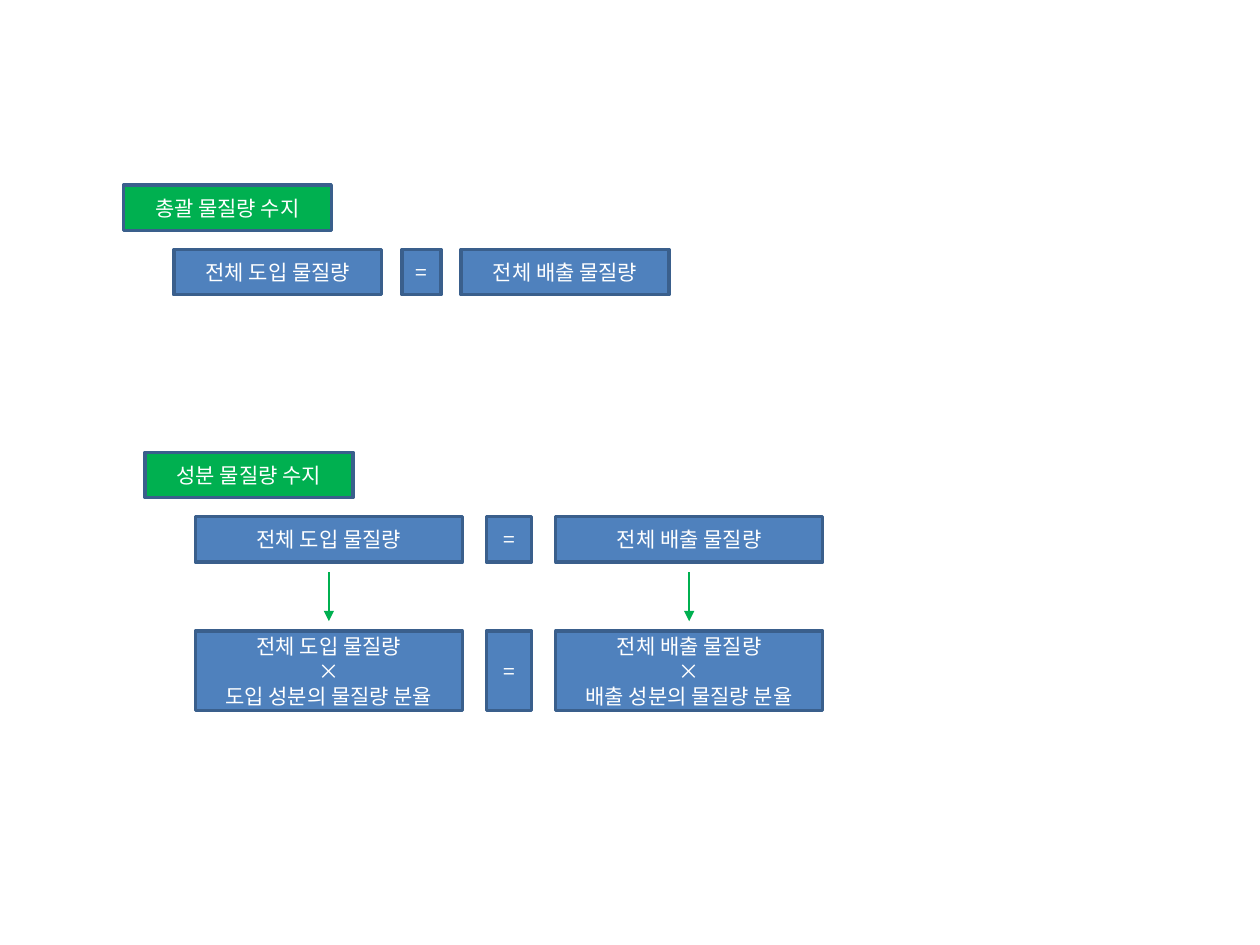
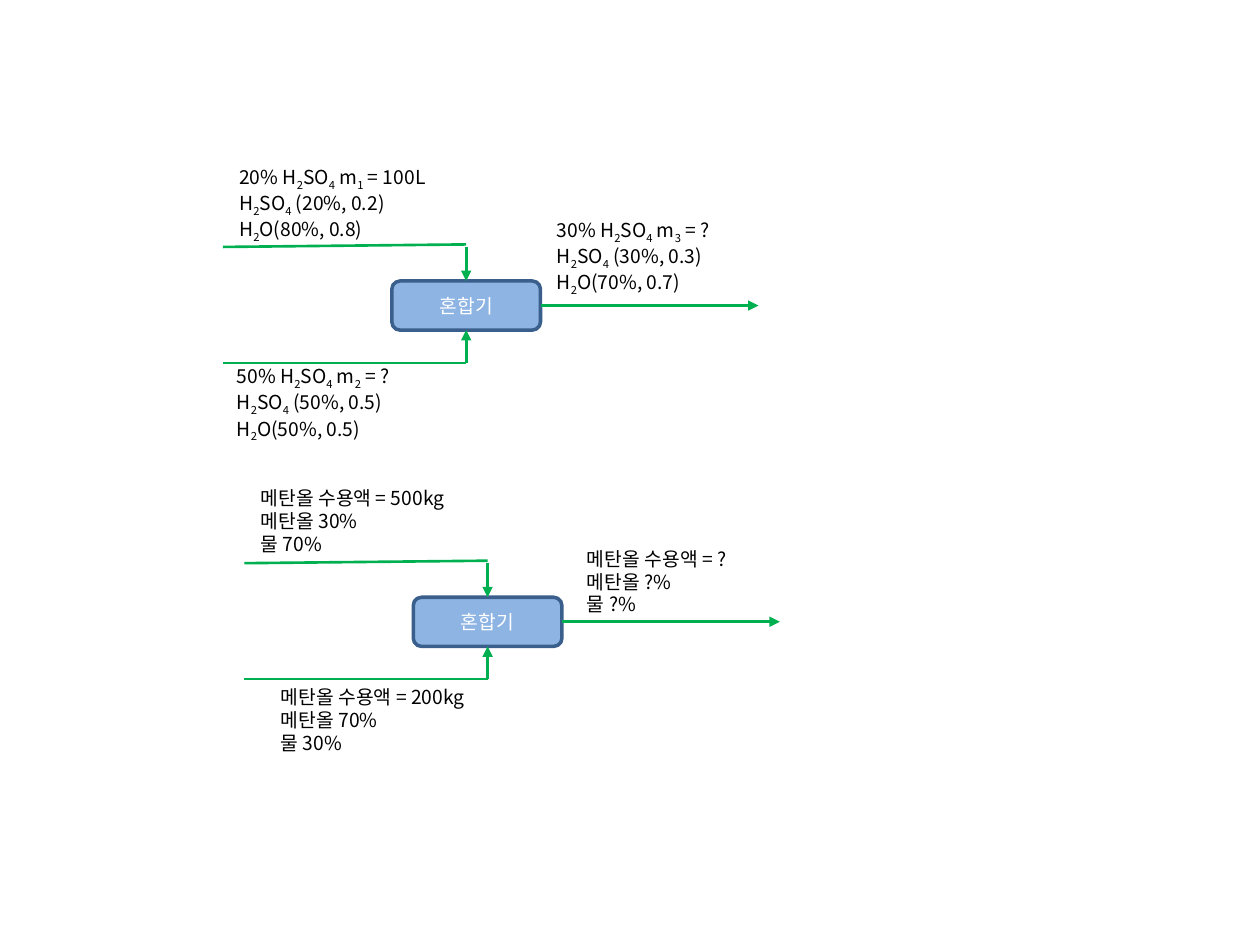
from lxml import etree
from pptx import Presentation
from pptx.dml.color import RGBColor
from pptx.enum.shapes import MSO_CONNECTOR, MSO_SHAPE
from pptx.enum.text import MSO_ANCHOR, PP_ALIGN
from pptx.oxml.ns import qn
from pptx.util import Inches, Pt

FONT = "Noto Sans CJK KR"
WHITE, BLACK = "FFFFFF", "000000"
GREEN, BLUE, LIGHT_BLUE, NAVY = "00B050", "4F81BD", "8EB4E3", "3A5F8C"
TERM_HEIGHT = 0.36


def color(hex_code):
    return RGBColor.from_string(hex_code)


def format_runs(paragraph, size, hex_code):
    for run in paragraph.runs:
        run.font.size = Pt(size)
        run.font.name = FONT
        run.font.color.rgb = color(hex_code)
        east_asian = etree.SubElement(run.font._element, qn("a:ea"))
        east_asian.set("typeface", FONT)


def write_formula(paragraph, formula):
    """Write a line in which each character after "_" is a subscript."""
    start, *parts = formula.split("_")
    pieces = [(start, False)]
    for part in parts:
        pieces += [(part[0], True), (part[1:], False)]
    for piece, is_subscript in pieces:
        if piece:
            run = paragraph.add_run()
            run.text = piece
            if is_subscript:
                run.font._element.set("baseline", "-25000")


def add_box(group, preset, left, top, width, height):
    box = group.shapes.add_shape(
        preset, Inches(left), Inches(top), Inches(width), Inches(height))
    box.shadow.inherit = False
    box.text_frame.word_wrap = True
    box.text_frame.vertical_anchor = MSO_ANCHOR.MIDDLE
    return box


def add_block(group, place, text, fill, preset=MSO_SHAPE.RECTANGLE, size=12):
    """Add a filled, outlined box with centred white text."""
    block = add_box(group, preset, *place)
    block.fill.solid()
    block.fill.fore_color.rgb = color(fill)
    block.line.color.rgb = color(NAVY)
    block.line.width = Pt(2)
    frame = block.text_frame
    frame.margin_top = frame.margin_bottom = 0
    frame.text = text
    for paragraph in frame.paragraphs:
        paragraph.alignment = PP_ALIGN.CENTER
        paragraph.line_spacing = Pt(size * 1.19)
        format_runs(paragraph, size, WHITE)


def add_stream_label(group, left, top, lines):
    label = add_box(group, MSO_SHAPE.ROUNDED_RECTANGLE, left, top, 1.97, 0.63)
    label.fill.background()
    label.line.fill.background()
    frame = label.text_frame
    spacing = Pt(15 if "_" in lines[0] else 13.1)
    for index, line in enumerate(lines):
        paragraph = frame.add_paragraph() if index else frame.paragraphs[0]
        paragraph.alignment = PP_ALIGN.LEFT
        paragraph.line_spacing = spacing
        write_formula(paragraph, line)
        format_runs(paragraph, 11, BLACK)


def add_flow(group, start, end, arrow=True):
    flow = group.shapes.add_connector(
        MSO_CONNECTOR.STRAIGHT, *(Inches(value) for value in (*start, *end)))
    flow.line.color.rgb = color(GREEN)
    flow.line.width = Pt(1.5)
    properties = flow._element.spPr
    if arrow:
        head = etree.SubElement(properties.find(qn("a:ln")), qn("a:tailEnd"))
        head.set("type", "triangle")
    etree.SubElement(properties, qn("a:effectLst"))


def add_equation(group, left, top, term_width, equals_width, gap, height, terms):
    """Add "input = output" as three boxes and return the centres of the terms."""
    equals_left = left + term_width + gap
    output_left = equals_left + equals_width + gap
    add_block(group, (left, top, term_width, height), terms[0], BLUE)
    add_block(group, (equals_left, top, equals_width, height), "=", BLUE)
    add_block(group, (output_left, top, term_width, height), terms[1], BLUE)
    return left + term_width / 2, output_left + term_width / 2


def add_balance(slide, left, top, heading, widths, totals, fractions=None):
    group = slide.shapes.add_group_shape()
    add_block(group, (left, top, 1.65, TERM_HEIGHT), heading, GREEN)
    equation_left, equation_top = left + 0.4, top + 0.51
    centres = add_equation(
        group, equation_left, equation_top, *widths, TERM_HEIGHT, totals)
    if fractions:
        for center in centres:
            add_flow(group, (center, equation_top + 0.44),
                     (center, equation_top + 0.83))
        details = [f"{total}\n×\n{fraction}"
                   for total, fraction in zip(totals, fractions)]
        add_equation(group, equation_left, equation_top + 0.91, *widths,
                     0.63, details)


def add_mixer(slide, left, top, streams):
    """Add a mixer with two inlets and one outlet; streams hold (dx, dy, lines)."""
    group = slide.shapes.add_group_shape()
    mixer_left, mixer_top, width, height = left + 1.34, top + 0.92, 1.18, 0.39
    mixer_right, mixer_bottom = mixer_left + width, mixer_top + height
    middle = mixer_top + height / 2
    inlet = left + 1.93
    upper, lower = top + 0.65, top + 1.57

    add_block(group, (mixer_left, mixer_top, width, height), "혼합기",
              LIGHT_BLUE, MSO_SHAPE.ROUNDED_RECTANGLE, 11)
    add_flow(group, (mixer_right, middle), (mixer_right + 1.73, middle))
    add_flow(group, (inlet, upper), (inlet, mixer_top))
    add_flow(group, (inlet, lower), (inlet, mixer_bottom))
    add_flow(group, (inlet, upper - 0.02), (left, upper), arrow=False)
    add_flow(group, (inlet, lower), (left, lower), arrow=False)
    for dx, dy, lines in streams:
        add_stream_label(group, left + dx, top + dy, lines)


def acid(percent, stream, amount):
    water = 100 - percent
    return [f"{percent}% H_2SO_4 m_{stream} = {amount}",
            f"H_2SO_4 ({percent}%, {percent / 100:.1f})",
            f"H_2O({water}%, {water / 100:.1f})"]


def methanol(amount, percent, water):
    return [f"메탄올 수용액 = {amount}", f"메탄올 {percent}%", f"물 {water}%"]


def build_balance_slide(slide):
    totals = ["전체 도입 물질량", "전체 배출 물질량"]
    fractions = ["도입 성분의 물질량 분율", "배출 성분의 물질량 분율"]
    add_balance(slide, 0.98, 1.47, "총괄 물질량 수지", (1.65, 0.31, 0.16), totals)
    add_balance(slide, 1.15, 3.59, "성분 물질량 수지", (2.12, 0.36, 0.19),
                totals, fractions)


def build_mixer_slide(slide):
    add_mixer(slide, 1.77, 1.31, [
        (0, 0, acid(20, 1, "100L")),
        (-0.02, 1.58, acid(50, 2, "?")),
        (2.52, 0.42, acid(30, 3, "?")),
    ])
    add_mixer(slide, 1.94, 3.82, [
        (0, 0, methanol("500kg", 30, 70)),
        (0.16, 1.58, methanol("200kg", 70, 30)),
        (2.59, 0.48, methanol("?", "?", "?")),
    ])


def main():
    deck = Presentation()
    deck.slide_width, deck.slide_height = Inches(10), Inches(7.5)
    blank = deck.slide_layouts[6]
    for build in (build_balance_slide, build_mixer_slide):
        build(deck.slides.add_slide(blank))
    deck.save("out.pptx")


if __name__ == "__main__":
    main()
